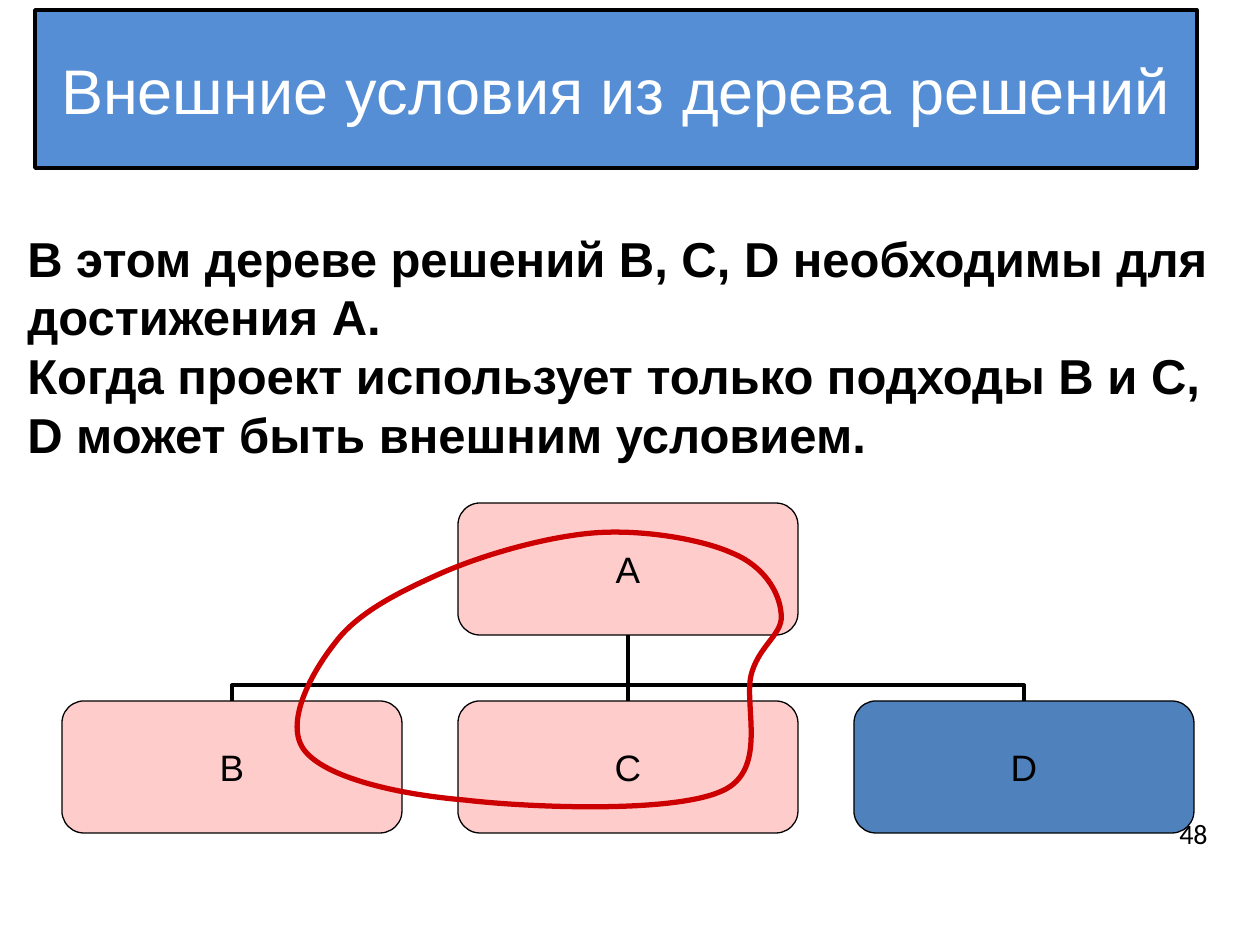
from lxml.etree import SubElement
from pptx import Presentation
from pptx.dml.color import RGBColor
from pptx.enum.shapes import MSO_CONNECTOR, MSO_SHAPE
from pptx.enum.text import MSO_ANCHOR, PP_ALIGN
from pptx.oxml.ns import qn
from pptx.util import Pt

PX = 914400 / 126

BLACK = RGBColor(0x00, 0x00, 0x00)
WHITE = RGBColor(0xFF, 0xFF, 0xFF)
TITLE_BLUE = RGBColor(0x55, 0x8E, 0xD5)
NODE_PINK = RGBColor(0xFF, 0xCC, 0xCC)
NODE_BLUE = RGBColor(0x4F, 0x81, 0xBD)
OUTLINE_RED = RGBColor(0xCC, 0x00, 0x00)

# Decision tree grid
NODE_WIDTH, NODE_HEIGHT, NODE_STEP = 340, 132, 396
TREE_LEFT, ROOT_TOP, CHILD_TOP = 62, 503, 701
CHILDREN = [("B", NODE_PINK), ("C", NODE_PINK), ("D", NODE_BLUE)]

# Project boundary: a start point, then two control points and an end per curve
BOUNDARY = [
    (593, 533),
    (546, 537), (486, 554), (444, 572),
    (401, 591), (358, 612), (335, 643),
    (312, 672), (283, 724), (305, 751),
    (326, 777), (394, 794), (464, 800),
    (533, 808), (674, 813), (722, 791),
    (770, 770), (742, 702), (752, 672),
    (761, 643), (785, 633), (781, 612),
    (779, 592), (764, 566), (732, 553),
    (701, 539), (641, 529), (593, 533),
]


def emu(*lengths):
    return [round(length * PX) for length in lengths]


def apply_format(target, values):
    for name, value in values.items():
        setattr(target, name, value)


def write_text(shape, lines, color, font, align, frame=None):
    text_frame = shape.text_frame
    apply_format(text_frame, {"word_wrap": True,
                              "vertical_anchor": MSO_ANCHOR.MIDDLE,
                              **(frame or {})})
    text_frame.text = "\n".join(lines)
    for paragraph in text_frame.paragraphs:
        paragraph.alignment = align
        for run in paragraph.runs:
            run.font.color.rgb = color
            apply_format(run.font, font)


def add_text(slide, box, lines, font, align, frame=None):
    shape = slide.shapes.add_textbox(*emu(*box))
    write_text(shape, lines, BLACK, font, align, frame)


def add_box(slide, kind, box, fill, line_width):
    shape = slide.shapes.add_shape(kind, *emu(*box))
    shape.shadow.inherit = False
    shape.fill.solid()
    shape.fill.fore_color.rgb = fill
    shape.line.color.rgb = BLACK
    shape.line.width = Pt(line_width)
    return shape


def add_node(slide, column, top, label, fill):
    box = (TREE_LEFT + column * NODE_STEP, top, NODE_WIDTH, NODE_HEIGHT)
    shape = add_box(slide, MSO_SHAPE.ROUNDED_RECTANGLE, box, fill, 0.75)
    write_text(shape, [label], BLACK, {"name": "Arial", "size": Pt(21)},
               PP_ALIGN.CENTER, {"word_wrap": False})
    return shape


def add_branch(slide, child, root, side):
    """Join child to root; side is -1, 0 or 1 for left, below or right."""
    kind = MSO_CONNECTOR.ELBOW if side else MSO_CONNECTOR.STRAIGHT
    connector = slide.shapes.add_connector(kind, 0, 0, 0, 0)
    connector.begin_connect(child, 0)
    connector.end_connect(root, 2)
    connector.line.color.rgb = BLACK
    connector.line.width = Pt(2.25)
    properties = connector._element.spPr
    SubElement(properties, qn("a:effectLst"))
    if not side:
        return
    # An upright elbow is a level one turned a quarter round its centre
    drop = CHILD_TOP - ROOT_TOP - NODE_HEIGHT
    center_x = TREE_LEFT + NODE_WIDTH / 2 + NODE_STEP * (1 + side / 2)
    center_y = CHILD_TOP - drop / 2
    left, top, width, height = emu(center_x - drop / 2, center_y - NODE_STEP / 2,
                                   drop, NODE_STEP)
    apply_format(connector, {"left": left, "top": top,
                             "width": width, "height": height})
    transform = properties.find(qn("a:xfrm"))
    transform.set("rot", "5400000" if side > 0 else "16200000")
    transform.set("flipH", "1" if side > 0 else "0")
    transform.set("flipV", "0")
    adjustments = properties.find(qn("a:prstGeom")).find(qn("a:avLst"))
    SubElement(adjustments, qn("a:gd"), name="adj1", fmla="val 23800")


def add_curve(slide, points, color, line_width):
    builder = slide.shapes.build_freeform(*points[0], scale=PX)
    builder.add_line_segments(points[1:], close=True)
    shape = builder.convert_to_shape()
    shape.shadow.inherit = False
    shape.fill.background()
    shape.line.color.rgb = color
    shape.line.width = Pt(line_width)
    # Turn each three straight segments into one Bézier curve
    segments = list(shape._element.iter(qn("a:lnTo")))
    for start in range(0, len(segments), 3):
        outline = segments[start].getparent()
        bezier = SubElement(outline, qn("a:cubicBezTo"))
        segments[start].addprevious(bezier)
        for segment in segments[start:start + 3]:
            bezier.append(segment[0])
            outline.remove(segment)


def main():
    presentation = Presentation()
    presentation.slide_width, presentation.slide_height = emu(1260, 945)
    slide = presentation.slides.add_slide(presentation.slide_layouts[6])

    # Title
    title = add_box(slide, MSO_SHAPE.RECTANGLE, (35, 10, 1162, 158), TITLE_BLUE, 2)
    write_text(title, ["Внешние условия из дерева решений"], WHITE,
               {"name": "Arial", "size": Pt(36)}, PP_ALIGN.CENTER)

    # Decision tree
    root = add_node(slide, 1, ROOT_TOP, "A", NODE_PINK)
    for column, (label, fill) in enumerate(CHILDREN):
        child = add_node(slide, column, CHILD_TOP, label, fill)
        add_branch(slide, child, root, column - 1)

    # Slide number
    add_text(slide, (926, 808, 294, 50), ["48"],
             {"name": "Calibri", "size": Pt(16)}, PP_ALIGN.RIGHT)

    # Project boundary
    add_curve(slide, BOUNDARY, OUTLINE_RED, 3)

    # Explanation
    add_text(slide, (15, 222, 1211, 251),
             ["В этом дереве решений B, C, D необходимы для достижения A.",
              "Когда проект использует только подходы B и C, "
              "D может быть внешним условием."],
             {"name": "Arial", "size": Pt(28), "bold": True},
             PP_ALIGN.LEFT, {"vertical_anchor": MSO_ANCHOR.TOP})

    presentation.save("out.pptx")


if __name__ == "__main__":
    main()
